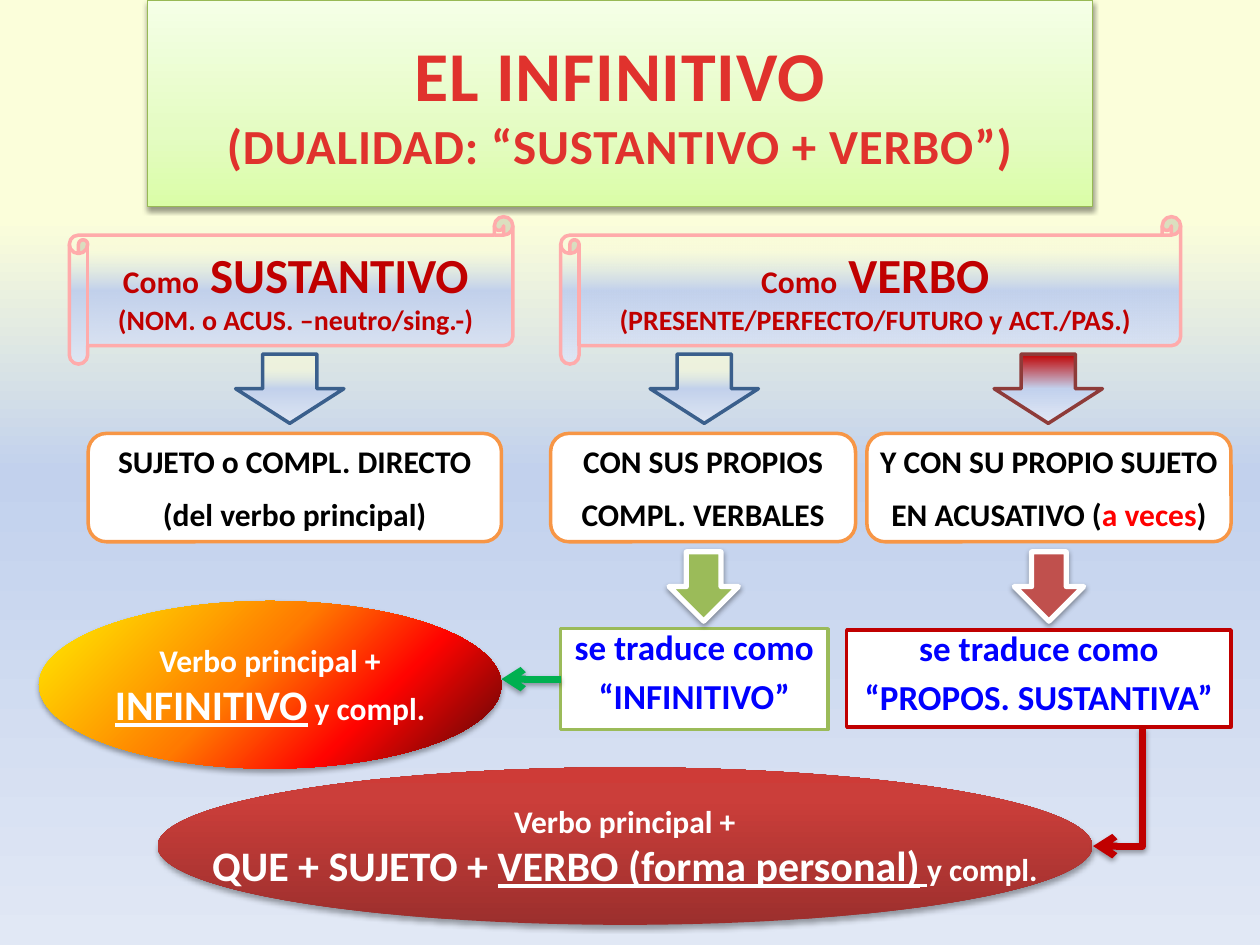
from lxml import etree
from pptx import Presentation
from pptx import util as u
from pptx.dml.color import RGBColor
from pptx.enum import shapes, text
from pptx.oxml.ns import qn

UNIT = 0.1
FONT = "Calibri"
WHITE, BLACK, BLUE, RED = "FFFFFF", "000000", "0000FF", "C00000"
GREEN, BRICK = "9BBB59", "C0504D"
SKY = [(23, "FBFEDA"), (50, "C2D1ED"), (100, "E1E8F5")]
MIST = [(23, "FBFEDA", 59)] + SKY[1:]
DUSK = [(0, RED)] + SKY[1:]
LIME = [(0, "DAFDA7"), (35, "E4FCC2"), (100, "F5FFE7")]
FIRE = [(0, "FFF200"), (45, "FF7A00"), (70, "FF0300"), (100, "4D0808")]
WINE = [(0, "9C2F2D"), (80, "CB3E3A"), (100, "CE3B37")]
SOFT, DEEP = (38, 1.6), (35, 1.8)
KIND = shapes.MSO_SHAPE


def cell(n):
    return u.Inches(n * UNIT)


def color(code):
    return RGBColor.from_string(code)


def node(top, tag, **attrs):
    return etree.SubElement(top, qn(tag), {k: str(v) for k, v in attrs.items()})


def blend(owner, root, stops, angle):
    owner.fill.solid()
    old = root.find(qn("a:solidFill"))
    grad = etree.Element(qn("a:gradFill"), rotWithShape="1")
    stack = node(grad, "a:gsLst")
    for pos, code, *alpha in stops:
        stop = node(stack, "a:gs", pos=pos * 1000)
        tint = node(stop, "a:srgbClr", val=code)
        for part in alpha:
            node(tint, "a:alpha", val=part * 1000)
    node(grad, "a:lin", ang=angle * 60000, scaled=0)
    root.replace(old, grad)


def shade(effect, look):
    alpha, dist = look
    drop = node(effect, "a:outerShdw", blurRad=u.Pt(3.1), dist=u.Pt(dist),
                dir=5400000, rotWithShape=0)
    node(node(drop, "a:srgbClr", val=BLACK), "a:alpha", val=alpha * 1000)


def paint(shape, fill, angle=90, line=None, width=2, shadow=None):
    props = shape.element.spPr
    if isinstance(fill, str):
        shape.fill.solid()
        shape.fill.fore_color.rgb = color(fill)
    else:
        blend(shape, props, fill, angle)
    if line:
        shape.line.color.rgb = color(line)
        shape.line.width = u.Pt(width)
    else:
        shape.line.fill.background()
    if shadow:
        shade(node(props, "a:effectLst"), shadow)
    else:
        node(props, "a:effectLst")


def write(shape, paras, gap=0, lead=None, top=False, inset=1, wrap=True, track=0):
    frame = shape.text_frame
    frame.word_wrap = wrap
    frame.auto_size = text.MSO_AUTO_SIZE.NONE
    frame.vertical_anchor = text.MSO_ANCHOR.TOP if top else text.MSO_ANCHOR.MIDDLE
    frame.margin_left = frame.margin_right = cell(inset)
    for i, runs in enumerate(paras):
        para = frame.paragraphs[0] if i == 0 else frame.add_paragraph()
        para.alignment = text.PP_ALIGN.CENTER
        para.space_before = u.Pt(gap if i else 0)
        if lead:
            para.line_spacing = lead
        para.font.name = FONT
        para.font.bold = True
        for words, size, code, *under in runs:
            run = para.add_run()
            run.text = words
            run.font.size = u.Pt(size)
            run.font.color.rgb = color(code)
            if under:
                run.font.underline = True
            if track:
                run.font._element.set("spc", str(track))


def place(slide, kind, x, y, w, h, fill, **look):
    shape = slide.shapes.add_shape(kind, cell(x), cell(y), cell(w), cell(h))
    paint(shape, fill, **look)
    return shape


def head(slide):
    title = slide.shapes.title
    title.left, title.top, title.width, title.height = map(cell, (11.7, 0, 75, 16.4))
    geom = node(title.element.spPr, "a:prstGeom", prst="horizontalScroll")
    node(node(geom, "a:avLst"), "a:gd", name="adj", fmla="val 10500")
    paint(title, LIME, 270, "98B955", 0.75, SOFT)
    write(title, [[("EL INFINITIVO", 40, "E0322D")],
                  [("(DUALIDAD: “SUSTANTIVO + VERBO”)", 28, "E0322D")]], track=50)


def scroll(slide, x, w, word, note):
    shape = place(slide, KIND.HORIZONTAL_SCROLL, x, 17.2, w, 11.7, MIST, line="FFABAB")
    write(shape, [[("Como", 18, RED), (" " + word, 28, RED)], [(note, 16, RED)]])


def card(slide, x, w, first, *rest, inset=1):
    shape = place(slide, KIND.ROUNDED_RECTANGLE, x, 34.4, w, 8.6, WHITE, line="F79646")
    write(shape, [[(first, 18, BLACK)], rest], gap=9, inset=inset)


def gloss(slide, x, y, w, h, line, word):
    shape = place(slide, KIND.RECTANGLE, x, y, w, h, WHITE, line=line)
    write(shape, [[("se traduce como", 20, BLUE)], [(word, 20, BLUE)]],
          gap=10, lead=0.75, top=True)


def oval(slide, x, y, w, h, fill, angle, runs, wrap=True):
    shape = place(slide, KIND.OVAL, x, y, w, h, fill, angle=angle, shadow=DEEP)
    write(shape, [[("Verbo principal +", 18, WHITE)], runs], inset=0.4, wrap=wrap)


def arrow(slide, kind, x, y, right, low, code):
    link = slide.shapes.add_connector(kind, cell(x), cell(y), cell(right), cell(low))
    link.line.color.rgb = color(code)
    link.line.width = u.Pt(4)
    node(link.line._get_or_add_ln(), "a:tailEnd", type="arrow")
    shade(node(link.element.spPr, "a:effectLst"), DEEP)
    return link


def turn(link):
    props = link.element.spPr
    props.find(qn("a:xfrm")).set("rot", "5400000")
    geom = props.find(qn("a:prstGeom"))
    guide = geom.find(qn("a:avLst"))
    if guide is None:
        guide = node(geom, "a:avLst")
    node(guide, "a:gd", name="adj1", fmla="val 100100")


def main():
    deck = Presentation()
    deck.slide_width, deck.slide_height = cell(100), cell(75)
    slide = deck.slides.add_slide(deck.slide_layouts[5])
    back = slide.background
    back.fill.solid()
    blend(back, slide.element.find(".//" + qn("p:bgPr")), SKY, 90)

    head(slide)
    gloss(slide, 44.5, 49.9, 21.2, 8, GREEN, "“INFINITIVO”")
    gloss(slide, 67.2, 50, 30.5, 7.7, RED, "“PROPOS. SUSTANTIVA”")
    arrow(slide, shapes.MSO_CONNECTOR.STRAIGHT, 44.5, 53.9, 39.8, 53.9, "00B050")
    scroll(slide, 5.5, 35.2, "SUSTANTIVO", "(NOM. o ACUS. –neutro/sing.-)")
    scroll(slide, 44.5, 49.2, "VERBO", "(PRESENTE/PERFECTO/FUTURO y ACT./PAS.)")

    for x, fill, line in ((18.7, MIST, "3A5F8C"), (51.6, MIST, "3A5F8C"),
                          (78.9, DUSK, "8E3B39")):
        place(slide, KIND.DOWN_ARROW, x, 28.1, 8.6, 5.5, fill, line=line)
    card(slide, 7, 32.8, "SUJETO o COMPL. DIRECTO", ("(del verbo principal)", 18, BLACK))
    card(slide, 43.7, 24.2, "CON SUS PROPIOS", ("COMPL. VERBALES", 18, BLACK))
    card(slide, 68.8, 28.9, "Y CON SU PROPIO SUJETO", ("EN ACUSATIVO (", 18, BLACK),
         ("a veces", 18, "FF0000"), (")", 18, BLACK), inset=0.4)
    for x, fill in ((53.1, GREEN), (80.5, BRICK)):
        place(slide, KIND.DOWN_ARROW, x, 43.8, 5.5, 5.5, fill,
              line=WHITE, width=3, shadow=SOFT)

    oval(slide, 3.1, 47.7, 36.7, 13.3, FIRE, 45,
         [("INFINITIVO", 24, WHITE, True), (" y compl.", 18, WHITE)])
    oval(slide, 12.5, 60.9, 74.2, 12.5, WINE, 270,
         [("QUE + SUJETO + ", 24, WHITE), ("VERBO (forma personal)", 24, WHITE, True),
          (" ", 18, WHITE, True), ("y compl.", 18, WHITE)], wrap=False)
    turn(arrow(slide, shapes.MSO_CONNECTOR.ELBOW, 84, 60.5, 93.4, 64.4, RED))
    deck.save("out.pptx")


if __name__ == "__main__":
    main()
